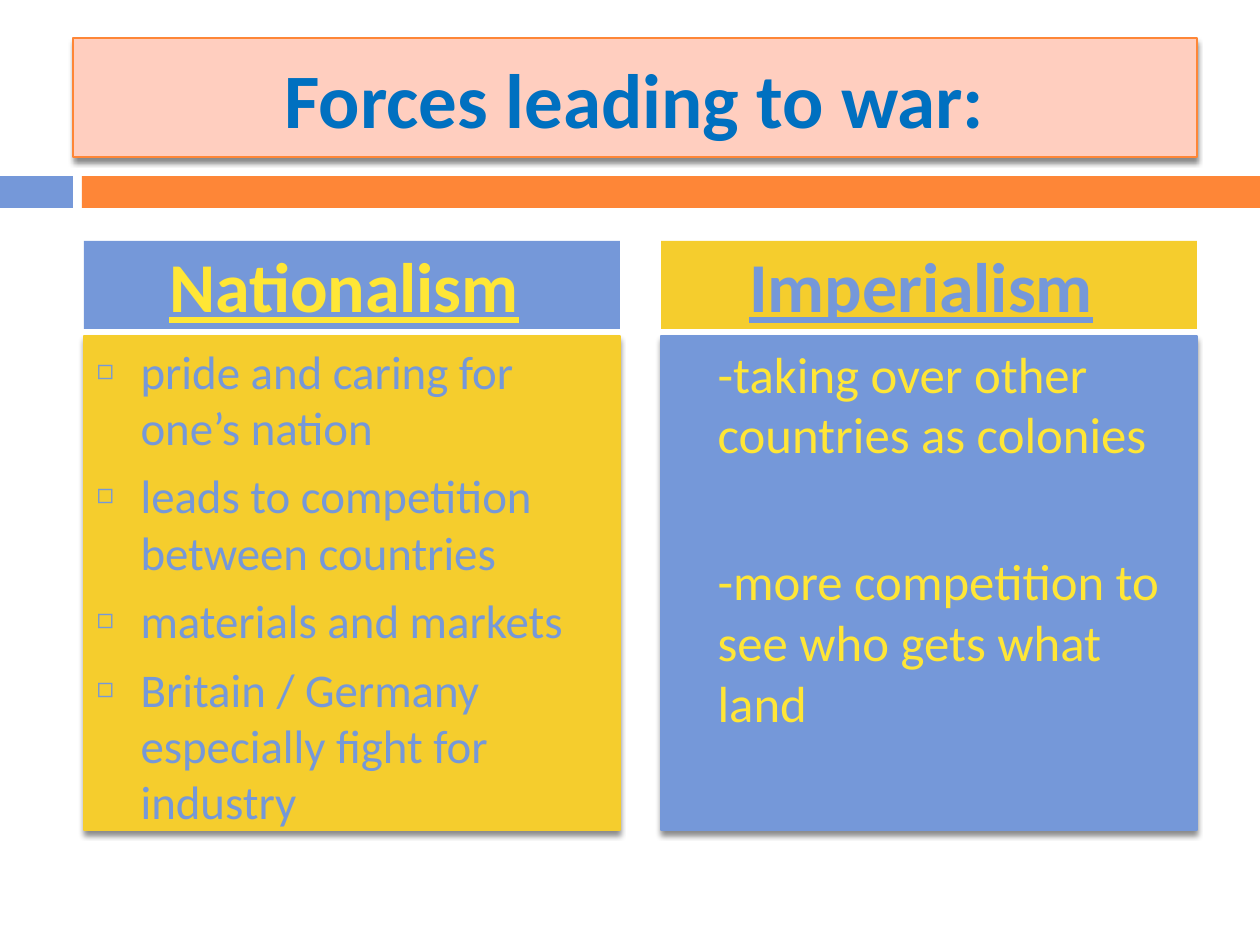
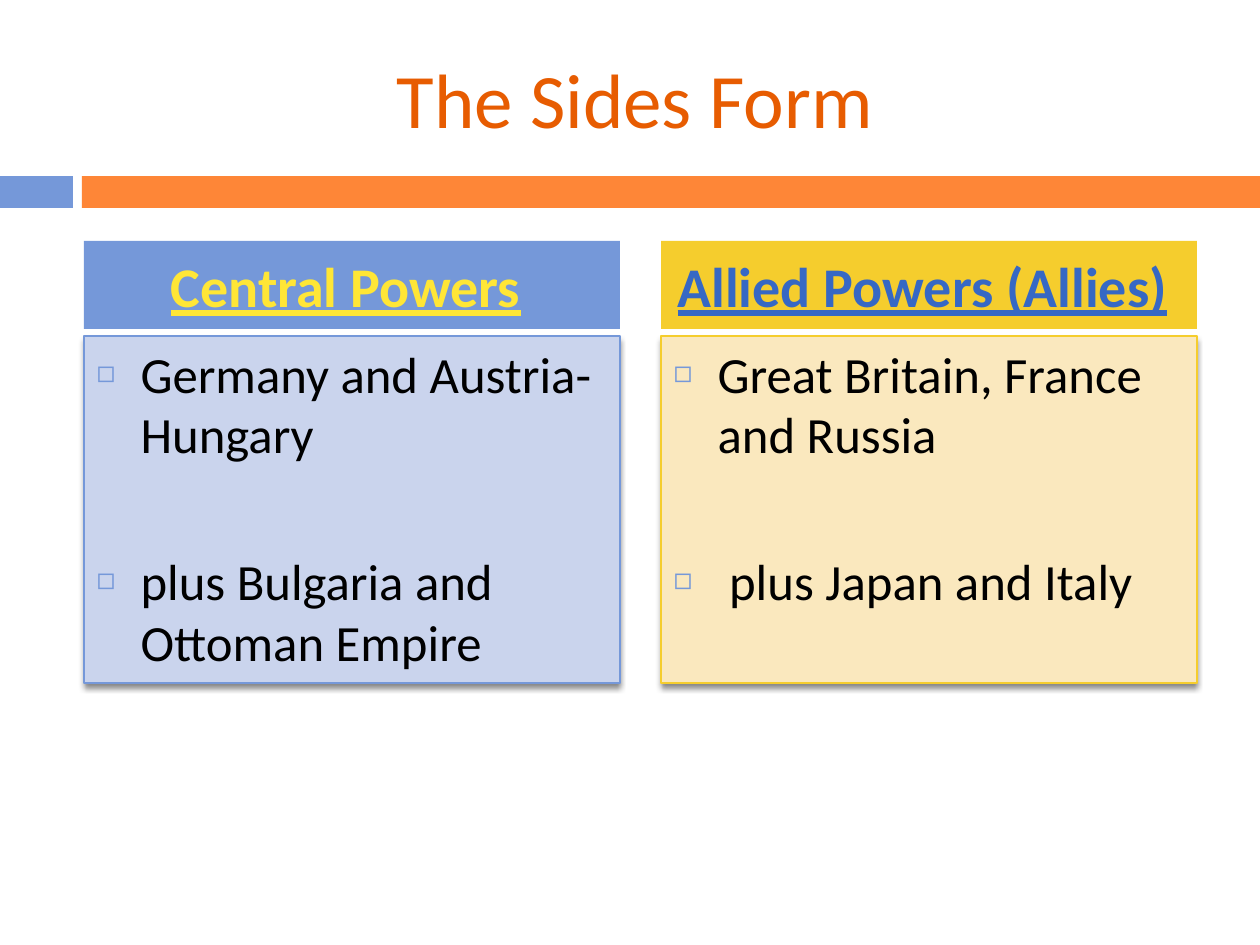
"""Build two comparison slides on the forces and sides of the war."""
from dataclasses import dataclass
from typing import Optional

from lxml import etree
from pptx import Presentation
from pptx.dml.color import RGBColor
from pptx.enum.shapes import MSO_SHAPE
from pptx.enum.text import MSO_ANCHOR, MSO_AUTO_SIZE, PP_ALIGN
from pptx.oxml.ns import qn
from pptx.util import Emu, Pt

RECTANGLE = MSO_SHAPE.RECTANGLE
MIDDLE, TOP = MSO_ANCHOR.MIDDLE, MSO_ANCHOR.TOP
CENTER, LEFT = PP_ALIGN.CENTER, PP_ALIGN.LEFT
NO_FIT = MSO_AUTO_SIZE.NONE

EMU_PER_PX = 914400 / 126
FONT = "Calibri"
BLUE, ORANGE, GOLD, YELLOW = "7598D9", "FE8637", "F5CD2D", "FFE636"
BLACK = "000000"
COMPARISON_LAYOUT = 4
COLUMN_LEFTS = (84, 661)
COLUMN_WIDTH = 536
HEADING_TOP, HEADING_HEIGHT = 241, 88
LIST_TOP = 336
LIST_INDENT = 44
PARAGRAPH_GAP, WIDE_GAP = 7, 49


@dataclass(frozen=True)
class Box:
    left: int
    top: int
    width: int
    height: int


@dataclass(frozen=True)
class Band:
    box: Box
    color: str


@dataclass(frozen=True)
class Title:
    text: str
    color: str
    bold: bool = False
    fill: Optional[str] = None


@dataclass(frozen=True)
class Column:
    heading: str
    heading_color: str
    heading_fill: str
    points: tuple[str, ...]
    text_color: str
    fill: str
    size: float = 29
    gap: int = WIDE_GAP
    bulleted: bool = True


@dataclass(frozen=True)
class Comparison:
    title: Title
    heading_size: int
    list_height: int
    columns: tuple[Column, Column]


TITLE_BOX = Box(73, 38, 1124, 119)
BANDS = (Band(Box(0, 176, 73, 32), BLUE), Band(Box(82, 176, 1178, 32), ORANGE))

COMPARISONS = (
    Comparison(
        Title("Forces leading to war:", "0070C0", True, "FFCEBF"), 40, 494,
        (
            Column(
                "Nationalism", YELLOW, BLUE,
                (
                    "pride and caring for one’s nation",
                    "leads to competition between countries",
                    "materials and markets",
                    "Britain / Germany especially fight for industry",
                ),
                BLUE, GOLD, size=26.8, gap=PARAGRAPH_GAP,
            ),
            Column(
                "Imperialism", BLUE, GOLD,
                (
                    "-taking over other countries as colonies",
                    "-more competition to see who gets what land",
                ),
                YELLOW, BLUE, bulleted=False,
            ),
        ),
    ),
    Comparison(
        Title("The Sides Form", "E75C01"), 32, 347,
        (
            Column(
                "Central Powers", YELLOW, BLUE,
                ("Germany and Austria-Hungary", "plus Bulgaria and Ottoman Empire"),
                BLACK, "CAD4ED",
            ),
            Column(
                "Allied Powers (Allies)", "3668C4", GOLD,
                ("Great Britain, France and Russia", " plus Japan and Italy"),
                BLACK, "FAE8BE",
            ),
        ),
    ),
)


def px(length: int) -> Emu:
    """Turn pixels into EMU."""
    return Emu(round(length * EMU_PER_PX))


def rgb(color: str) -> RGBColor:
    """Turn a hex string into a colour."""
    return RGBColor.from_string(color)


def add_xml(parent, tag: str, **attributes: str):
    """Append a DrawingML element to its parent."""
    return etree.SubElement(parent, qn(tag), attributes)


def paint(shape, color: str) -> None:
    """Give a shape a solid fill."""
    shape.fill.solid()
    shape.fill.fore_color.rgb = rgb(color)


def raise_panel(shape, fill: str, outline: str) -> None:
    """Give a panel its fill, outline and soft shadow below."""
    paint(shape, fill)
    shape.line.color.rgb = rgb(outline)
    shape.line.width = Pt(0.79)
    effects = add_xml(shape.element.spPr, "a:effectLst")
    shadow = add_xml(effects, "a:outerShdw", blurRad=str(Pt(3)), dist=str(Pt(2.4)),
                     dir="5400000", algn="ctr", rotWithShape="0")
    shadow_color = add_xml(shadow, "a:srgbClr", val=BLACK)
    add_xml(shadow_color, "a:alpha", val="45000")


def place(shape, box: Box, anchor: MSO_ANCHOR):
    """Move a placeholder and return its prepared text frame."""
    shape.left, shape.top = px(box.left), px(box.top)
    shape.width, shape.height = px(box.width), px(box.height)
    frame = shape.text_frame
    frame.word_wrap = True
    frame.auto_size = NO_FIT
    frame.vertical_anchor = anchor
    return frame


def add_run(paragraph, text: str, size: float, color: str,
            bold: bool = False, underline: bool = False) -> None:
    """Add one formatted run to a paragraph."""
    run = paragraph.add_run()
    run.text = text
    run.font.name = FONT
    run.font.size = Pt(size)
    run.font.color.rgb = rgb(color)
    run.font.bold = bold
    run.font.underline = underline


def set_bullet(paragraph, bulleted: bool) -> None:
    """Indent a list paragraph and set its square bullet."""
    properties = paragraph._p.get_or_add_pPr()
    indent = px(LIST_INDENT)
    properties.set("marL", str(indent))
    properties.set("indent", str(-indent if bulleted else 0))
    if bulleted:
        bullet_color = add_xml(properties, "a:buClr")
        add_xml(bullet_color, "a:srgbClr", val=BLUE)
        add_xml(properties, "a:buSzPct", val="60000")
        add_xml(properties, "a:buChar", char="◻")
    else:
        add_xml(properties, "a:buNone")


def draw_band(slide, band: Band) -> None:
    """Draw one plain band under the title."""
    box = band.box
    bar = slide.shapes.add_shape(RECTANGLE, px(box.left), px(box.top),
                                 px(box.width), px(box.height))
    bar.shadow.inherit = False
    paint(bar, band.color)
    bar.line.fill.background()


def draw_title(shape, title: Title) -> None:
    """Fill the title placeholder."""
    paragraph = place(shape, TITLE_BOX, MIDDLE).paragraphs[0]
    paragraph.alignment = CENTER
    add_run(paragraph, title.text, 44, title.color, title.bold)
    if title.fill:
        raise_panel(shape, title.fill, ORANGE)


def draw_heading(shape, column: Column, left: int, size: int) -> None:
    """Fill the heading placeholder of a column."""
    box = Box(left, HEADING_TOP, COLUMN_WIDTH, HEADING_HEIGHT)
    paragraph = place(shape, box, MIDDLE).paragraphs[0]
    paint(shape, column.heading_fill)
    paragraph.alignment = CENTER
    paragraph.space_before = Pt(PARAGRAPH_GAP)
    add_run(paragraph, column.heading, size, column.heading_color, True, True)
    add_run(paragraph, " ", size, column.heading_color, True)


def draw_points(shape, column: Column, left: int, height: int) -> None:
    """Fill the list placeholder of a column."""
    frame = place(shape, Box(left, LIST_TOP, COLUMN_WIDTH, height), TOP)
    raise_panel(shape, column.fill, column.heading_fill if column.text_color == BLACK else column.fill)
    for index, point in enumerate(column.points):
        paragraph = frame.add_paragraph() if index else frame.paragraphs[0]
        paragraph.alignment = LEFT
        paragraph.space_before = Pt(column.gap if index else PARAGRAPH_GAP)
        set_bullet(paragraph, column.bulleted)
        add_run(paragraph, point, column.size, column.text_color)


def draw_comparison(deck, comparison: Comparison) -> None:
    """Add one slide with a title, the bands and two columns."""
    slide = deck.slides.add_slide(deck.slide_layouts[COMPARISON_LAYOUT])
    for band in BANDS:
        draw_band(slide, band)
    draw_title(slide.shapes.title, comparison.title)
    _, *areas = slide.placeholders
    for column, left, heading, points in zip(
            comparison.columns, COLUMN_LEFTS, areas[::2], areas[1::2]):
        draw_heading(heading, column, left, comparison.heading_size)
        draw_points(points, column, left, comparison.list_height)


def main() -> None:
    """Build and save the deck."""
    deck = Presentation()
    deck.slide_width, deck.slide_height = px(1260), px(945)
    for comparison in COMPARISONS:
        draw_comparison(deck, comparison)
    deck.save("out.pptx")


if __name__ == "__main__":
    main()
